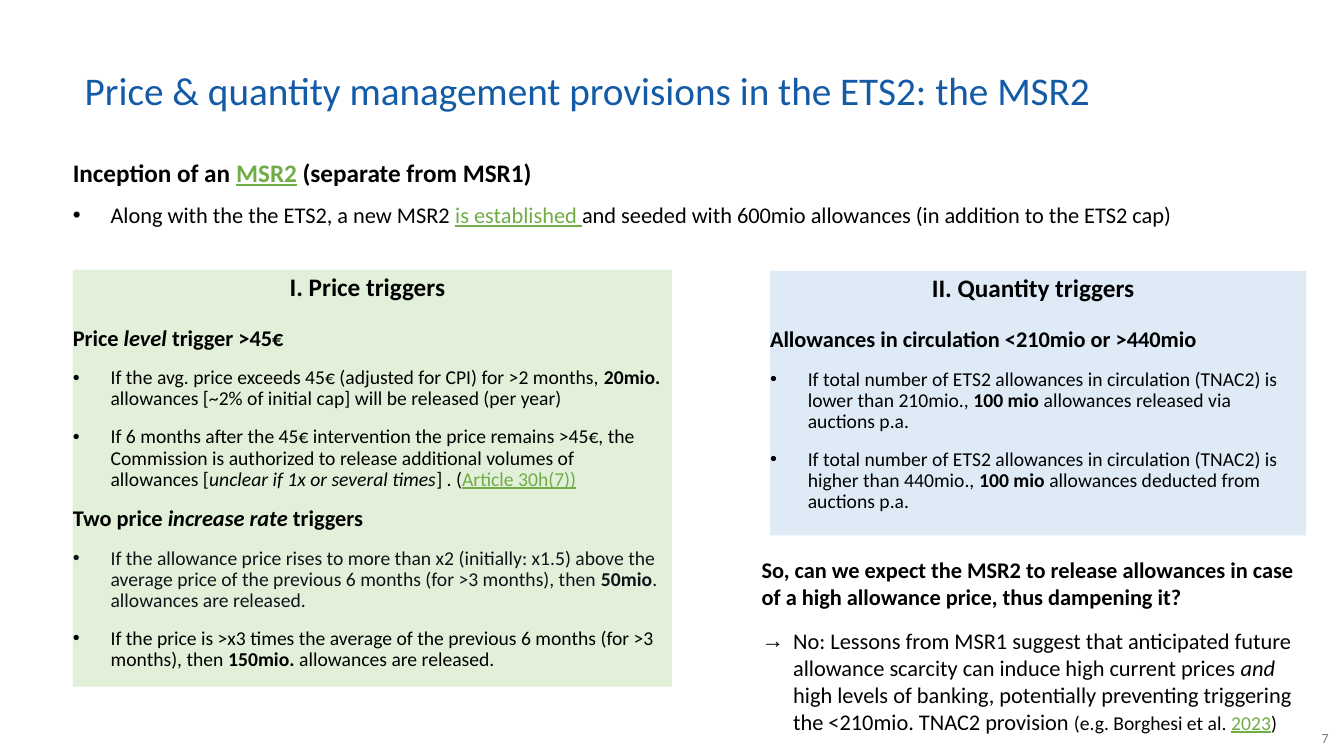
from lxml import etree
from pptx import Presentation
from pptx.dml.color import RGBColor
from pptx.enum import shapes, text
from pptx.oxml import ns
from pptx.util import Pt

FONT = "Calibri"
BLACK = RGBColor(0x00, 0x00, 0x00)
INK = RGBColor(0x0F, 0x14, 0x19)
BLUE = RGBColor(0x13, 0x5B, 0xA6)
GREY = RGBColor(0x80, 0x80, 0x80)
LINK = RGBColor(0x70, 0xAD, 0x47)
PALE_GREEN = RGBColor(0xE2, 0xF0, 0xD9)
PALE_BLUE = RGBColor(0xDE, 0xEB, 0xF7)
CENTER = text.PP_ALIGN.CENTER
PANEL_INSETS = (0, 3.6, 7.2, 3.6)


def write(p, content, size=14, color=BLACK, bold=False, italic=False, underline=False):
    """Add one formatted run to a paragraph."""
    r = p.add_run()
    r.text = content
    f = r.font
    f.name, f.size, f.bold, f.italic, f.underline = FONT, Pt(size), bold, italic, underline
    f.color.rgb = color


def add_bullet(p, char, indent):
    pPr = p._p.get_or_add_pPr()
    pPr.set("marL", str(Pt(indent)))
    pPr.set("indent", str(-Pt(indent)))
    etree.SubElement(pPr, ns.qn("a:buFont")).set("typeface", "Arial")
    etree.SubElement(pPr, ns.qn("a:buChar")).set("char", char)


def para(*runs, bullet=None, indent=27, before=0, align=None, line=0.9, **fmt):
    """Describe a paragraph; a run is a string or (string, format changes)."""
    def build(p):
        if bullet:
            add_bullet(p, bullet, indent)
        p.space_before = Pt(before)
        p.line_spacing = line
        if align is not None:
            p.alignment = align
        for run in runs:
            content, changes = (run, {}) if isinstance(run, str) else run
            write(p, content, **{**fmt, **changes})
    return build


def heading(*runs, before=18):
    return para(*runs, size=16, bold=True, before=before)


def item(*runs, **fmt):
    return para(*runs, bullet="•", before=12, **fmt)


def bold(content):
    return content, {"bold": True}


def italic(content):
    return content, {"italic": True}


def link(content):
    return content, {"color": LINK, "underline": True}


def fill_text(sp, paras, insets, anchor=text.MSO_ANCHOR.TOP):
    tf = sp.text_frame
    tf.word_wrap = True
    tf.vertical_anchor = anchor
    tf.margin_left, tf.margin_top, tf.margin_right, tf.margin_bottom = map(Pt, insets)
    for i, build in enumerate(paras):
        p = tf.paragraphs[0] if i == 0 else tf.add_paragraph()
        p.alignment = text.PP_ALIGN.LEFT
        build(p)


def add_text(s, box, *paras, insets=PANEL_INSETS, **kw):
    fill_text(s.shapes.add_textbox(*map(Pt, box)), paras, insets, **kw)


def add_panel(s, box, color, *paras):
    sp = s.shapes.add_shape(shapes.MSO_SHAPE.RECTANGLE, *map(Pt, box))
    sp.shadow.inherit = False
    sp.fill.solid()
    sp.fill.fore_color.rgb = color
    sp.line.fill.background()
    fill_text(sp, paras, PANEL_INSETS)


def main():
    prs = Presentation()
    prs.slide_width, prs.slide_height = Pt(960), Pt(540)
    s = prs.slides.add_slide(prs.slide_layouts[6])

    # Slide number and title
    add_text(s, (902, 520.5, 47, 12.5),
             para("7", size=10, color=GREY, align=text.PP_ALIGN.RIGHT, line=1.0),
             insets=(0, 0, 0, 0), anchor=text.MSO_ANCHOR.BOTTOM)
    add_text(s, (60.5, 42.5, 860, 47),
             para("Price & quantity management provisions in the ETS2: the MSR2",
                  size=28, color=BLUE, align=text.PP_ALIGN.JUSTIFY),
             insets=(0, 3.6, 0, 3.6), anchor=text.MSO_ANCHOR.MIDDLE)

    # Introduction
    add_text(s, (52, 111, 799, 62),
             para("Inception of an ", link("MSR2"), " (separate from MSR1)", size=18, bold=True),
             item("Along with the the ETS2, a new MSR2 ", link("is established "),
                  "and seeded with 600mio allowances (in addition to the ETS2 cap)", size=16))

    # Price triggers
    add_panel(
        s, (52, 192.5, 428, 298), PALE_GREEN,
        para("I. Price triggers", size=18, bold=True, align=CENTER),
        heading("Price ", italic("level "), "trigger >45€"),
        item("If the avg. price exceeds 45€ (adjusted for CPI) for >2 months, ", bold("20mio."),
             " allowances [~2% of initial cap] will be released (per year)"),
        item("If 6 months after the 45€ intervention the price remains >45€, the Commission "
             "is authorized to release additional volumes of allowances [",
             italic("unclear if 1x or several times"), "] . (", link("Article 30h(7))")),
        heading("Two price ", italic("increase rate "), "triggers", before=12),
        item("If the allowance price rises to more than x2 (initially: x1.5) above the average "
             "price of the previous 6 months (for >3 months), then ",
             bold("50mio"), ". allowances are released.", color=INK),
        item("If the price is >x3 times the average of the previous 6 months (for >3 months), "
             "then ", bold("150mio."), " allowances are released."))

    # Quantity triggers
    add_panel(
        s, (550, 193.5, 383, 189), PALE_BLUE,
        para("II. Quantity triggers", size=18, bold=True, align=CENTER),
        heading("Allowances in circulation <210mio or >440mio"),
        *[item("If total number of ETS2 allowances in circulation (TNAC2) is "
               f"{limit}mio., ", bold("100 mio "), f"allowances {action} auctions p.a.")
          for limit, action in (("lower than 210", "released via"),
                                ("higher than 440", "deducted from"))])

    # Conclusion
    add_text(s, (537, 394, 410, 154.8),
             para("So, can we expect the MSR2 to release allowances in case of a high "
                  "allowance price, thus dampening it?", size=16, bold=True, line=1.0),
             para("No: Lessons from MSR1 suggest that anticipated future allowance scarcity "
                  "can induce high current prices ", italic("and "),
                  "high levels of banking, potentially preventing triggering the <210mio. "
                  "TNAC2 provision ", ("(e.g. Borghesi et al. ", {"size": 14}),
                  ("2023", {"size": 14, "color": LINK, "underline": True}), (")", {"size": 14}),
                  size=16, bullet="→", indent=22.5, before=12, line=1.0),
             insets=(7.2, 3.6, 7.2, 3.6))

    prs.save("out.pptx")


if __name__ == "__main__":
    main()
